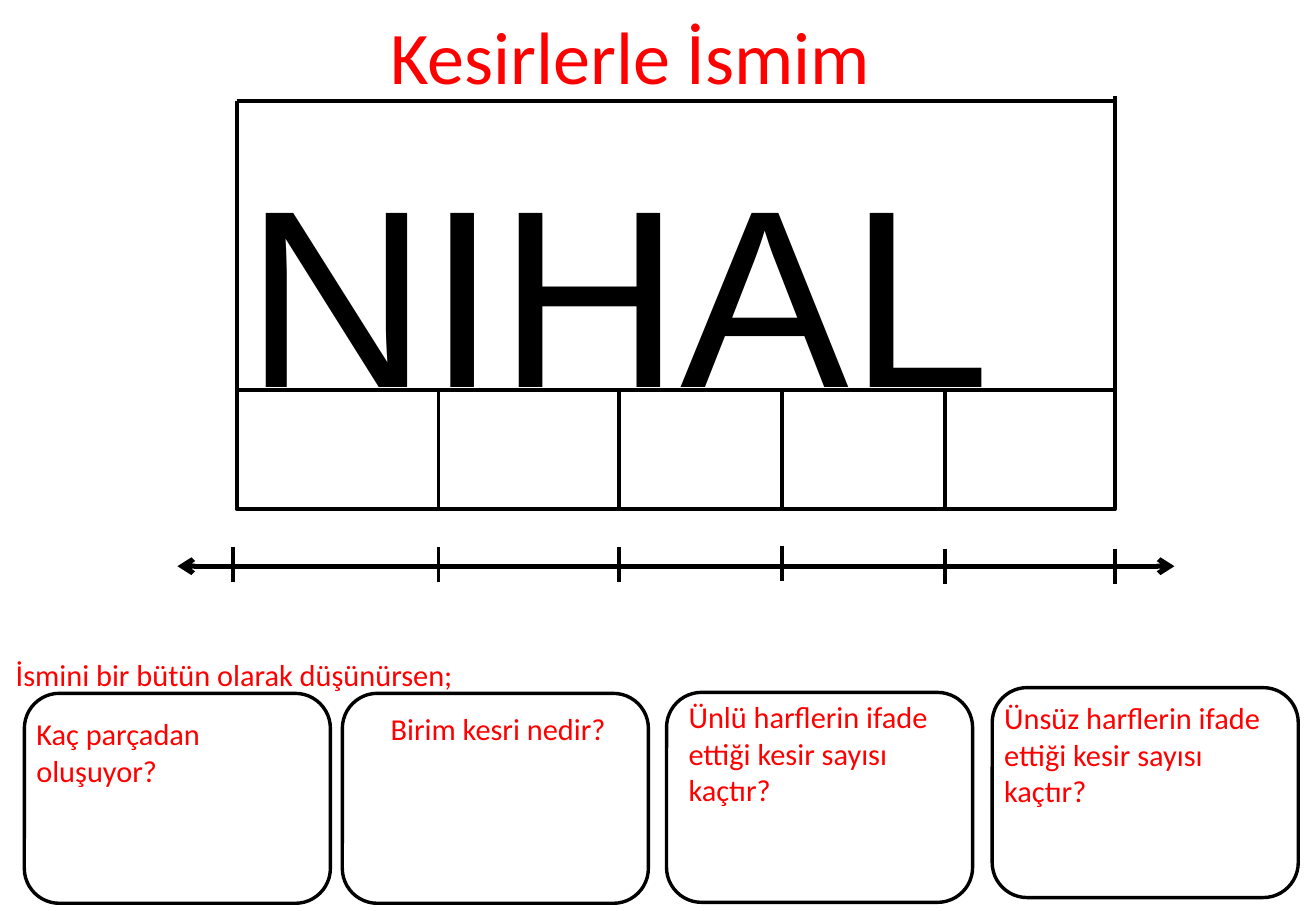
from lxml import etree
from pptx import Presentation
from pptx import util as u
from pptx.dml.color import RGBColor
from pptx.enum import shapes
from pptx.oxml import ns

COLORS = {"paper": "FFFFFF", "ink": "000000", "red": "FF0000"}

# Letter strip, in centimetres
EDGES = [4.95, 9.17, 12.95, 16.36, 19.76, 23.32]
FRAME_TOP, STRIP_TOP, STRIP_BOTTOM = 2.11, 8.15, 10.65

# Number line ticks: left, top
TICKS = [(4.88, 11.44), (9.17, 11.44), (12.95, 11.44),
         (16.36, 11.41), (19.76, 11.48), (23.32, 11.48)]
TICK_HEIGHT = 0.73
AXIS_Y = 11.84

# Question cards: text, card position, text position, text height
CARD_SIZE = (6.4, 4.39)
QUESTIONS = [
    ("Kaç parçadan oluşuyor?", (0.51, 14.5), (0.51, 14.83), 1.02),
    ("Birim kesri nedir?", (7.16, 14.5), (7.92, 14.73), 1.02),
    ("Ünlü harflerin ifade ettiği kesir sayısı kaçtır?",
     (13.94, 14.48), (14.15, 14.48), 1.8),
    ("Ünsüz harflerin ifade ettiği kesir sayısı kaçtır?",
     (20.75, 14.38), (20.75, 14.5), 1.8),
]


def color(name):
    return RGBColor.from_string(COLORS[name])


def lengths(*values):
    return [u.Cm(value) for value in values]


def add_text(slide, text, left, top, width, height, *, size=18,
             font="Calibri", fill="red", inset_top=0.13):
    frame = slide.shapes.add_textbox(*lengths(left, top, width, height)).text_frame
    frame.word_wrap = True
    frame.margin_top = u.Cm(inset_top)
    run = frame.paragraphs[0].add_run()
    run.text = text
    run.font.size = u.Pt(size)
    run.font.name = font
    run.font.color.rgb = color(fill)


def add_box(slide, kind, left, top, width, height, *, weight):
    shape = slide.shapes.add_shape(kind, *lengths(left, top, width, height))
    shape.shadow.inherit = False
    shape.fill.solid()
    shape.fill.fore_color.rgb = color("paper")
    shape.line.color.rgb = color("ink")
    shape.line.width = u.Pt(weight)


def add_line(slide, x1, y1, x2, y2, *, weight=2.25, arrows=False):
    line = slide.shapes.add_connector(
        shapes.MSO_CONNECTOR.STRAIGHT, *lengths(x1, y1, x2, y2))
    line.line.color.rgb = color("ink")
    line.line.width = u.Pt(weight)
    if arrows:
        for end in ("a:headEnd", "a:tailEnd"):
            etree.SubElement(line.line._get_or_add_ln(), ns.qn(end), type="arrow")
    etree.SubElement(line._element.spPr, ns.qn("a:effectLst"))


def add_name_frame(slide):
    left, *dividers, right = EDGES
    add_box(slide, shapes.MSO_SHAPE.RECTANGLE, left, STRIP_TOP,
            right - left, STRIP_BOTTOM - STRIP_TOP, weight=2.25)
    for x in dividers:
        add_line(slide, x, STRIP_TOP, x, STRIP_BOTTOM)
    add_line(slide, left, FRAME_TOP, left, STRIP_TOP)
    add_line(slide, right, FRAME_TOP - 0.1, right, STRIP_TOP)
    add_line(slide, left, FRAME_TOP, right, FRAME_TOP)
    add_text(slide, "NIHAL", 4.88, 2.21, 23.39, 6.68, size=150,
             font="Arial", fill="ink", inset_top=0.6)


def add_number_line(slide):
    add_line(slide, 3.71, AXIS_Y, 24.56, AXIS_Y, weight=3, arrows=True)
    for x, top in TICKS:
        add_line(slide, x, top, x, top + TICK_HEIGHT)


def add_questions(slide):
    for question, card, label, height in QUESTIONS:
        add_box(slide, shapes.MSO_SHAPE.ROUNDED_RECTANGLE, *card, *CARD_SIZE, weight=2)
        add_text(slide, question, *label, CARD_SIZE[0], height)


def main():
    presentation = Presentation()
    presentation.slide_width, presentation.slide_height = lengths(27.52, 19.05)
    slide = presentation.slides.add_slide(presentation.slide_layouts[6])

    # Title
    add_text(slide, "Kesirlerle İsmim", 7.92, 0.08, 15.77, 2.13, size=44)

    # Name over its letter strip, then the number line
    add_name_frame(slide)
    add_number_line(slide)

    # Questions
    add_questions(slide)
    add_text(slide, "İsmini bir bütün olarak düşünürsen;", 0.08, 13.59, 10.31, 1.02)

    presentation.save("out.pptx")


if __name__ == "__main__":
    main()
